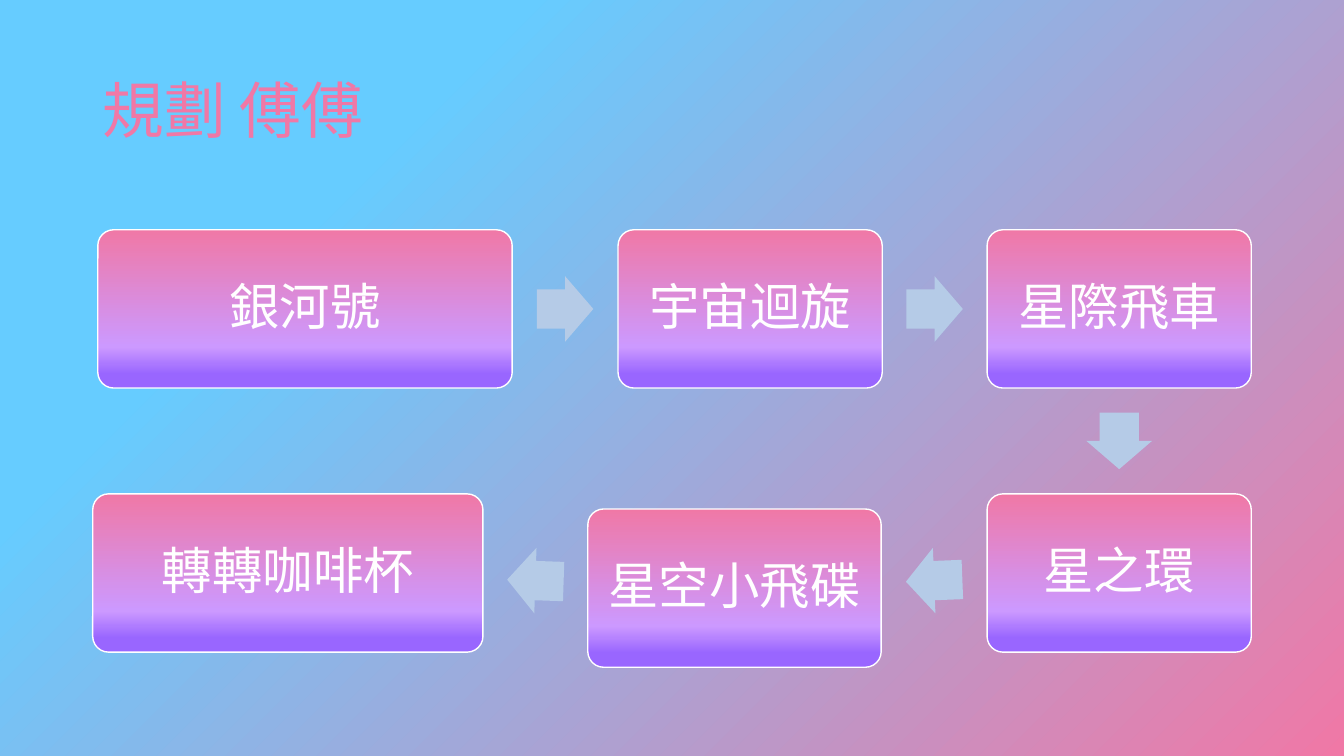
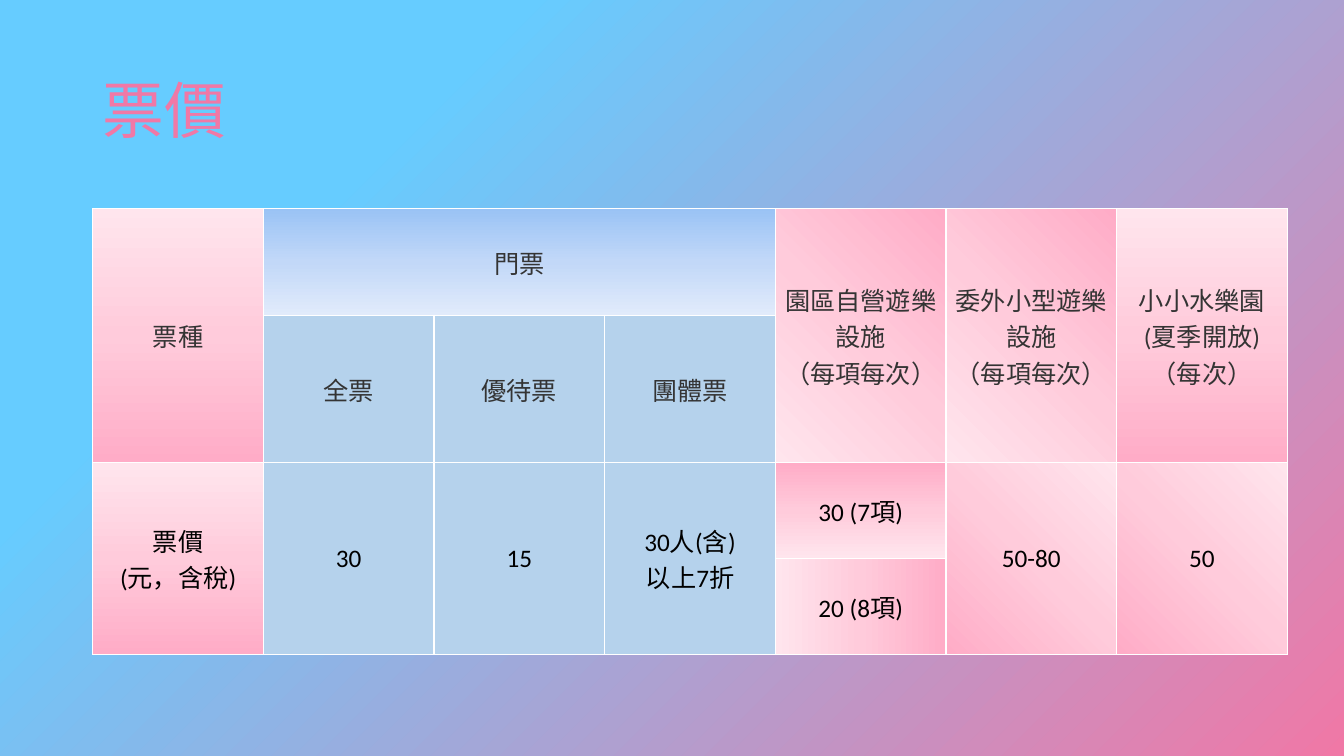
import math

import pptx
import pptx.dml.color
import pptx.enum.shapes
import pptx.enum.text
import pptx.oxml
import pptx.oxml.ns
import pptx.util

Inches = pptx.util.Inches
Pt = pptx.util.Pt
RGBColor = pptx.dml.color.RGBColor
Shapes = pptx.enum.shapes.MSO_SHAPE
qn = pptx.oxml.ns.qn

PINK = RGBColor(0xF0, 0x78, 0xA6)
SKY = RGBColor(0x66, 0xCC, 0xFF)
LILAC = RGBColor(0xCC, 0x99, 0xFF)
VIOLET = RGBColor(0x99, 0x66, 0xFF)
ARROW_BLUE = RGBColor(0xB5, 0xCB, 0xE7)
CELL_BLUE = RGBColor(0xB5, 0xD2, 0xEC)
HEADER_GREY = RGBColor(0x34, 0x34, 0x34)
WHITE = RGBColor(0xFF, 0xFF, 0xFF)
BLACK = RGBColor(0, 0, 0)

BACKGROUND_STOPS = [(0, PINK), (75, SKY)]
BOX_STOPS = [(0, PINK), (74, LILAC), (91, VIOLET)]
ROSE_STOPS = [(0, RGBColor(0xFF, 0xAC, 0xC7)), (50, RGBColor(0xFF, 0xCB, 0xDB)),
              (100, RGBColor(0xFF, 0xE5, 0xED))]
BLUE_STOPS = [(0, RGBColor(0x9A, 0xC3, 0xF5)), (50, RGBColor(0xC2, 0xD8, 0xF8)),
              (100, RGBColor(0xE1, 0xEB, 0xFB))]
BOTTOM_RIGHT = (100, 100, 0, 0)
TOP_RIGHT = (100, 0, 0, 100)
BOTTOM_LEFT = (0, 100, 100, 0)

TITLE_FONT = "Noto Sans CJK SC"
BODY_FONT = "Calibri"

BOX_HEIGHT = 1.57
RIDES = [
    ("銀河號", 0.97, 2.28, 4.11),
    ("宇宙迴旋", 6.13, 2.28, 2.62),
    ("星際飛車", 9.79, 2.28, 2.62),
    ("星之環", 9.79, 4.9, 2.62),
    ("星空小飛碟", 5.83, 5.05, 2.91),
    ("轉轉咖啡杯", 0.92, 4.9, 3.87),
]
ARROW_WIDTH, ARROW_HEIGHT = 0.56, 0.65

TABLE_LEFT, TABLE_TOP, TABLE_WIDTH = 0.92, 2.07, 11.85
COLUMN_COUNT = 7
ROW_HEIGHTS = [1.06, 1.46, 0.95, 0.95]
HEADER_ROWS = 2
CELLS = [
    (0, 0, 2, 1, "票種", (ROSE_STOPS, 270)),
    (0, 1, 1, 3, "門票", (BLUE_STOPS, 90)),
    (0, 4, 2, 1, "園區自營遊樂設施\n（每項每次）", (ROSE_STOPS, TOP_RIGHT)),
    (0, 5, 2, 1, "委外小型遊樂設施\n（每項每次）", (ROSE_STOPS, 135)),
    (0, 6, 2, 1, "小小水樂園\n(夏季開放)\n（每次）", (ROSE_STOPS, 270)),
    (1, 1, 1, 1, "全票", None),
    (1, 2, 1, 1, "優待票", None),
    (1, 3, 1, 1, "團體票", None),
    (2, 0, 2, 1, "票價\n(元，含稅)", (ROSE_STOPS, 270)),
    (2, 1, 2, 1, "30", None),
    (2, 2, 2, 1, "15", None),
    (2, 3, 2, 1, "30人(含)\n以上7折", None),
    (2, 4, 1, 1, "30 (7項)", (ROSE_STOPS, 90)),
    (2, 5, 2, 1, "50-80", (ROSE_STOPS, 315)),
    (2, 6, 2, 1, "50", (ROSE_STOPS, BOTTOM_LEFT)),
    (3, 4, 1, 1, "20 (8項)", (ROSE_STOPS, 180)),
]


def set_gradient(fill, container, stops, direction):
    fill.gradient()
    gradient = next(container.iter(qn("a:gradFill")))
    stop_xml = "".join(
        f'<a:gs pos="{position * 1000}"><a:srgbClr val="{color}"/></a:gs>'
        for position, color in stops)
    if isinstance(direction, tuple):
        sides = " ".join(f'{side}="{value * 1000}"' for side, value in zip("ltrb", direction))
        shade = f'<a:path path="circle"><a:fillToRect {sides}/></a:path>'
    else:
        shade = f'<a:lin ang="{direction * 60000}" scaled="0"/>'
    gradient.getparent().replace(gradient, pptx.oxml.parse_xml(
        f'<a:gradFill {pptx.oxml.ns.nsdecls("a")} rotWithShape="1">'
        f'<a:gsLst>{stop_xml}</a:gsLst>{shade}</a:gradFill>'))


def write_text(text_frame, text, size, color, font_name=BODY_FONT,
               alignment=pptx.enum.text.PP_ALIGN.CENTER, line_spacing=None):
    paragraph = text_frame.paragraphs[0]
    paragraph.alignment = alignment
    paragraph.line_spacing = line_spacing
    for index, line in enumerate(text.split("\n")):
        if index:
            paragraph.add_line_break()
        run = paragraph.add_run()
        run.text = line
        run.font.name = font_name
        run.font.size = Pt(size)
        run.font.color.rgb = color


def add_titled_slide(presentation, title):
    slide = presentation.slides.add_slide(presentation.slide_layouts[6])
    box = slide.shapes.add_textbox(Inches(0.92), Inches(0.4), Inches(11.5), Inches(1.45))
    box.text_frame.word_wrap = True
    box.text_frame.vertical_anchor = pptx.enum.text.MSO_ANCHOR.MIDDLE
    write_text(box.text_frame, title, 44, PINK, TITLE_FONT,
               pptx.enum.text.PP_ALIGN.LEFT, 0.9)
    return slide


def add_ride(slide, name, left, top, width):
    shape = slide.shapes.add_shape(Shapes.ROUNDED_RECTANGLE, Inches(left), Inches(top),
                                   Inches(width), Inches(BOX_HEIGHT))
    shape.adjustments[0] = 0.1
    shape.shadow.inherit = False
    set_gradient(shape.fill, shape._element, BOX_STOPS, 90)
    shape.line.color.rgb = WHITE
    shape.line.width = Pt(1)
    frame = shape.text_frame
    frame.word_wrap = True
    frame.vertical_anchor = pptx.enum.text.MSO_ANCHOR.MIDDLE
    frame.margin_left = frame.margin_right = Inches(0.15)
    write_text(frame, name, 36, WHITE, line_spacing=0.9)


def add_arrow(slide, start, end):
    _, start_left, start_top, start_width = start
    _, end_left, end_top, end_width = end
    center_x = (max(start_left, end_left)
                + min(start_left + start_width, end_left + end_width)) / 2
    center_y = (max(start_top, end_top) + min(start_top, end_top) + BOX_HEIGHT) / 2
    run = end_left + end_width / 2 - start_left - start_width / 2
    arrow = slide.shapes.add_shape(
        Shapes.RIGHT_ARROW, Inches(center_x - ARROW_WIDTH / 2),
        Inches(center_y - ARROW_HEIGHT / 2), Inches(ARROW_WIDTH), Inches(ARROW_HEIGHT))
    arrow.adjustments[0] = 0.6
    arrow.adjustments[1] = 0.5
    arrow.rotation = math.degrees(math.atan2(end_top - start_top, run))
    arrow.shadow.inherit = False
    arrow.fill.solid()
    arrow.fill.fore_color.rgb = ARROW_BLUE
    arrow.line.fill.background()


def add_borders(cell):
    properties = cell._tc.get_or_add_tcPr()
    for index, side in enumerate("LRTB"):
        properties.insert(index, pptx.oxml.parse_xml(
            f'<a:ln{side} {pptx.oxml.ns.nsdecls("a")} w="{Pt(1)}"><a:solidFill>'
            f'<a:srgbClr val="{WHITE}"/></a:solidFill></a:ln{side}>'))


def add_price_table(slide):
    table = slide.shapes.add_table(
        len(ROW_HEIGHTS), COLUMN_COUNT, Inches(TABLE_LEFT), Inches(TABLE_TOP),
        Inches(TABLE_WIDTH), Inches(sum(ROW_HEIGHTS))).table
    table.first_row = table.horz_banding = False
    for column in table.columns:
        column.width = Inches(TABLE_WIDTH / COLUMN_COUNT)
    for row, height in zip(table.rows, ROW_HEIGHTS):
        row.height = Inches(height)
    for row, column, row_span, column_span, text, gradient in CELLS:
        cell = table.cell(row, column)
        if row_span * column_span > 1:
            cell.merge(table.cell(row + row_span - 1, column + column_span - 1))
        cell.vertical_anchor = pptx.enum.text.MSO_ANCHOR.MIDDLE
        cell.margin_left = cell.margin_right = Inches(0.03)
        cell.margin_top = cell.margin_bottom = Inches(0.03)
        if gradient:
            set_gradient(cell.fill, cell._tc, *gradient)
        else:
            cell.fill.solid()
            cell.fill.fore_color.rgb = CELL_BLUE
        write_text(cell.text_frame, text, 18, HEADER_GREY if row < HEADER_ROWS else BLACK)
    for cell in table.iter_cells():
        add_borders(cell)


def main():
    presentation = pptx.Presentation()
    presentation.slide_width = Inches(13.33)
    presentation.slide_height = Inches(7.5)
    master = presentation.slide_master
    set_gradient(master.background.fill, master._element.cSld, BACKGROUND_STOPS, BOTTOM_RIGHT)

    plan_slide = add_titled_slide(presentation, "規劃 傅傅")
    for ride in RIDES:
        add_ride(plan_slide, *ride)
    for start, end in zip(RIDES, RIDES[1:]):
        add_arrow(plan_slide, start, end)

    price_slide = add_titled_slide(presentation, "票價")
    add_price_table(price_slide)
    presentation.save("out.pptx")


if __name__ == "__main__":
    main()
